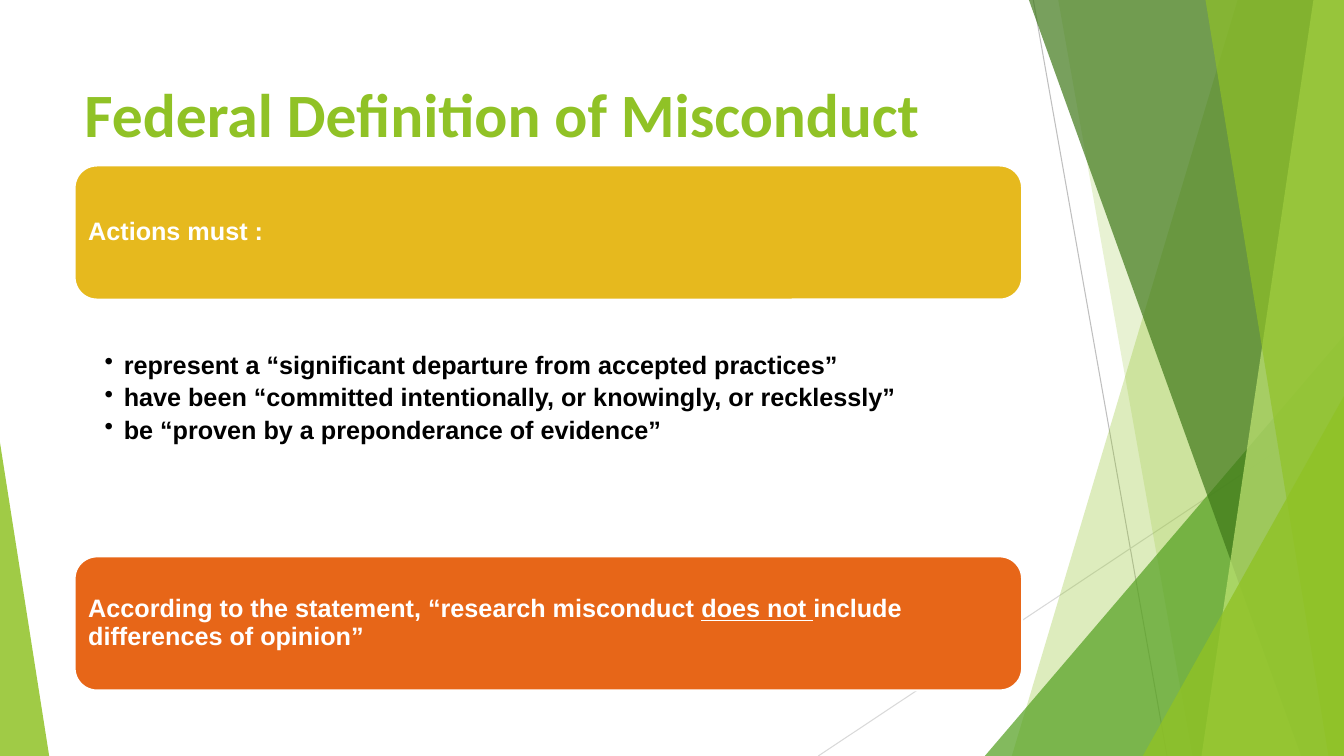
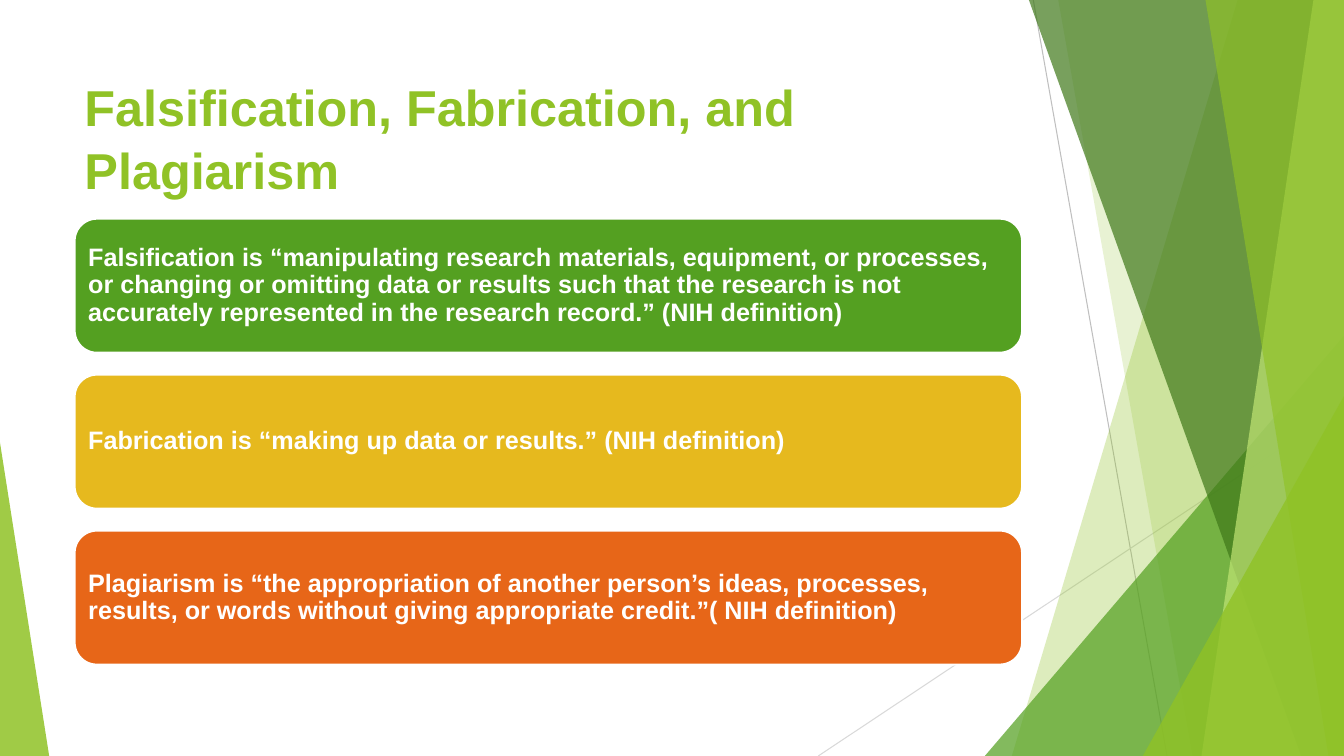
import pptx
import pptx.util
import pptx.dml.color
import pptx.enum.shapes
import pptx.enum.text
import pptx.oxml.ns
import lxml.etree

Cm, Pt = pptx.util.Cm, pptx.util.Pt
SHAPES = pptx.enum.shapes.MSO_SHAPE
ANCHORS = pptx.enum.text.MSO_ANCHOR
qn = pptx.oxml.ns.qn

COLORS = {
    "lime": "90C226", "green": "54A021", "forest": "3F7819", "pale": "C0E474",
    "yellow": "E6B91E", "orange": "E76618", "white": "FFFFFF", "black": "000000",
    "gray": "BFBFBF", "light gray": "D9D9D9",
}
WIDTH, HEIGHT = 33.87, 19.05
LEFT, CONTENT_WIDTH = 1.88, 23.88
CARD_HEIGHT, CARD_GAP = 3.38, 0.55

# Backdrop, back to front: bands run from an x on the top edge to one on the bottom
RIGHT_FACETS = [
    ("band", (31.19, 25.5), "lime", 30),
    ("band", (26.67, 30.05), "lime", 20),
    ("triangle", (24.82, 8.46, WIDTH), "green", 72),
    ("band", (25.93, 32.79), "forest", 70),
    ("band", (33.1, 30.28), "pale", 70),
    ("band", (30.38, 33.48), "lime", 65),
    ("triangle", (28.8, 9.98, WIDTH), "lime", 80),
]


def rgb(name):
    return pptx.dml.color.RGBColor.from_string(COLORS[name])


def write_text(frame, paragraphs, *, size=18, font="Arial", color="white", bold=True,
               spacing=0.9, after=0, bullet=None, indent=0.48,
               anchor=ANCHORS.TOP, insets=(0.25, 0.13, 0.25, 0.13)):
    """Fill a text frame; words between underscores are underlined."""
    frame.word_wrap = True
    frame.vertical_anchor = anchor
    (frame.margin_left, frame.margin_top,
     frame.margin_right, frame.margin_bottom) = map(Cm, insets)
    for number, text in enumerate(paragraphs):
        paragraph = frame.add_paragraph() if number else frame.paragraphs[0]
        paragraph.alignment = pptx.enum.text.PP_ALIGN.LEFT
        paragraph.line_spacing = spacing
        paragraph.space_after = Pt(after)
        for part, words in enumerate(text.split("_")):
            run = paragraph.add_run()
            run.text = words
            run.font.size, run.font.name, run.font.bold = Pt(size), font, bold
            run.font.color.rgb = rgb(color)
            if part % 2:
                run.font.underline = True
        if bullet:
            properties = paragraph._p.get_or_add_pPr()
            properties.set("marL", str(Cm(indent)))
            properties.set("indent", str(-Cm(indent)))
            lxml.etree.SubElement(properties, qn("a:buChar")).set("char", bullet)


class Deck:
    def __init__(self):
        self.presentation = pptx.Presentation()
        self.presentation.slide_width = Cm(WIDTH)
        self.presentation.slide_height = Cm(HEIGHT)
        self.slide = None

    def new_slide(self, title, **title_format):
        self.slide = self.presentation.slides.add_slide(self.presentation.slide_layouts[6])
        self.backdrop()
        self.text_box(1.7, 3.66, [title], color="lime", spacing=1.05, **title_format)

    def backdrop(self):
        self.line((26.04, 0), (29.41, HEIGHT), "gray")
        self.line((WIDTH, 10.24), (20.62, HEIGHT), "light gray")
        for kind, place, color, opacity in RIGHT_FACETS:
            draw = self.band if kind == "band" else self.triangle
            draw(*place, color=color, opacity=opacity)
        self.triangle(0, 11.15, 1.24, peak=0, color="lime", opacity=85)

    def line(self, start, end, color):
        connector = self.slide.shapes.add_connector(
            pptx.enum.shapes.MSO_CONNECTOR.STRAIGHT, *map(Cm, start + end))
        connector.line.color.rgb = rgb(color)
        connector.line.width = Pt(0.75)
        lxml.etree.SubElement(connector.element.spPr, qn("a:effectLst"))

    def paint(self, shape, color, opacity=100):
        shape.shadow.inherit = False
        shape.fill.solid()
        shape.fill.fore_color.rgb = rgb(color)
        shape.line.fill.background()
        if opacity < 100:
            fill = shape.element.spPr.find(qn("a:solidFill"))
            lxml.etree.SubElement(fill[0], qn("a:alpha")).set("val", str(opacity * 1000))

    def band(self, top_x, bottom_x, color, opacity):
        builder = self.slide.shapes.build_freeform(Cm(top_x), 0)
        corners = [(WIDTH, 0), (WIDTH, HEIGHT), (bottom_x, HEIGHT)]
        builder.add_line_segments([(Cm(x), Cm(y)) for x, y in corners], close=True)
        self.paint(builder.convert_to_shape(), color, opacity)

    def triangle(self, left, top, right, color, opacity, peak=1):
        shape = self.slide.shapes.add_shape(
            SHAPES.ISOSCELES_TRIANGLE, Cm(left), Cm(top), Cm(right - left), Cm(HEIGHT - top))
        shape.adjustments[0] = peak
        self.paint(shape, color, opacity)

    def text_box(self, top, height, paragraphs, **text_format):
        box = self.slide.shapes.add_textbox(Cm(LEFT), Cm(top), Cm(CONTENT_WIDTH), Cm(height))
        write_text(box.text_frame, paragraphs, **text_format)

    def card(self, top, color, text):
        shape = self.slide.shapes.add_shape(
            SHAPES.ROUNDED_RECTANGLE, Cm(LEFT), Cm(top), Cm(CONTENT_WIDTH), Cm(CARD_HEIGHT))
        self.paint(shape, color)
        shape.line.color.rgb = rgb("white")
        shape.line.width = Pt(1.5)
        write_text(shape.text_frame, [text], anchor=ANCHORS.MIDDLE, insets=(0.18,) * 4)

    def save(self):
        self.presentation.save("out.pptx")


def main():
    deck = Deck()

    # Federal definition
    deck.new_slide("Federal Definition of Misconduct", size=44, font="Calibri")
    deck.card(4.17, "yellow", "Actions must :")
    deck.text_box(8.81, 5.21, [
        "represent a “significant departure from accepted practices”",
        "have been “committed intentionally, or knowingly, or recklessly”",
        "be “proven by a preponderance of evidence”",
    ], color="black", after=3.6, bullet="•", insets=(0.76, 0.08, 0.36, 0.08))
    deck.card(14.02, "orange", "According to the statement, “research misconduct "
              "_does not _include differences of opinion”")

    # Three kinds of misconduct
    deck.new_slide("Falsification, Fabrication, and Plagiarism", size=36)
    definitions = [
        ("green", "Falsification is “manipulating research materials, equipment, or processes, "
                  "or changing or omitting data or results such that the research is not "
                  "accurately represented in the research record.” (NIH definition)"),
        ("yellow", "Fabrication is “making up data or results.” (NIH definition)"),
        ("orange", "Plagiarism is “the appropriation of another person’s ideas, processes, "
                   "results, or words without giving appropriate credit.”( NIH definition)"),
    ]
    for row, (color, text) in enumerate(definitions):
        deck.card(5.51 + row * (CARD_HEIGHT + CARD_GAP), color, text)

    deck.save()


if __name__ == "__main__":
    main()
